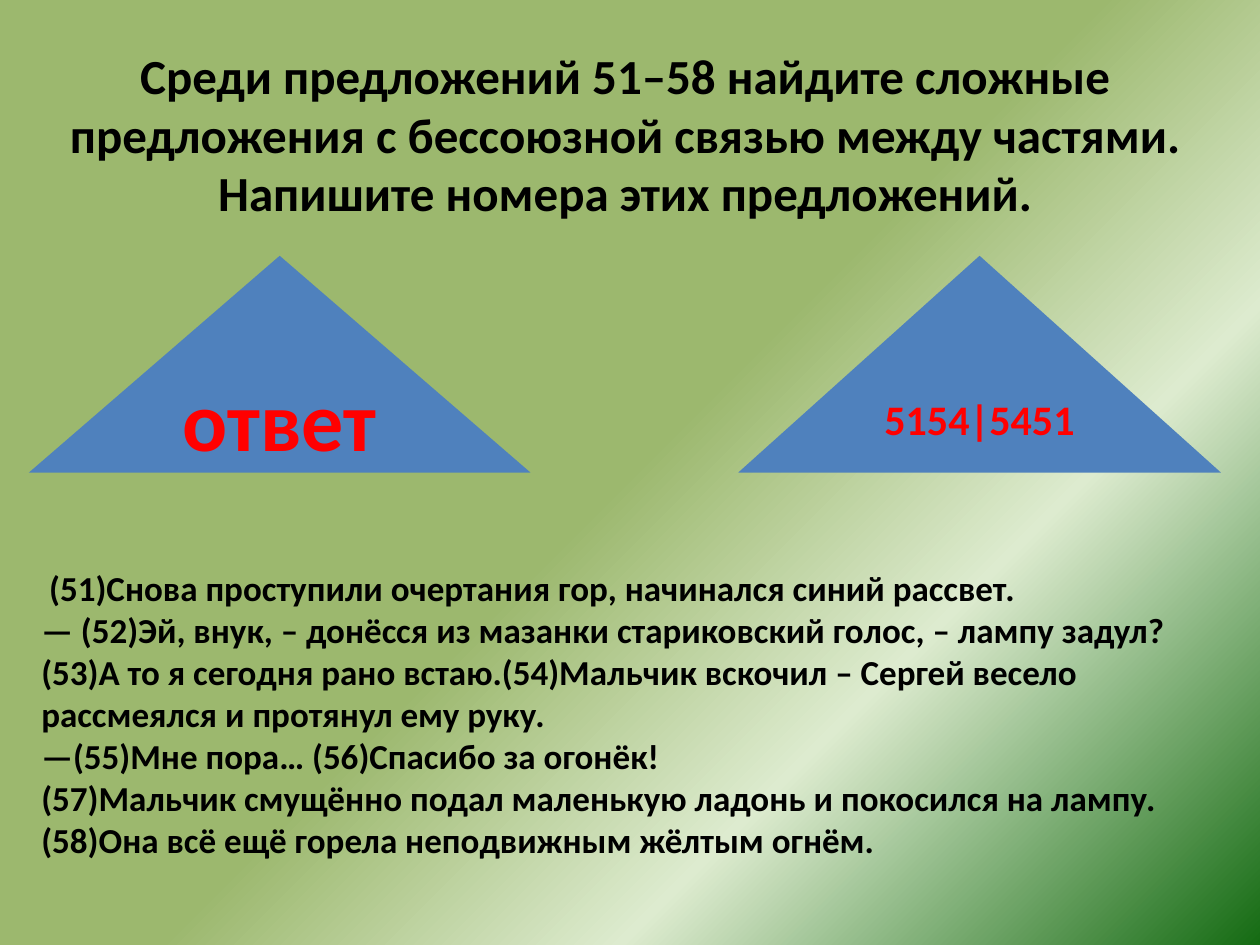
from copy import deepcopy
from dataclasses import dataclass

from pptx import Presentation
from pptx.dml.color import RGBColor as RGB
from pptx.enum.shapes import MSO_SHAPE as Shape
from pptx.enum.text import MSO_ANCHOR as Anchor, PP_ALIGN as Align
from pptx.oxml.ns import qn
from pptx.util import Inches, Pt


@dataclass(frozen=True)
class Theme:
    font: str = "Calibri"
    text: str = "000000"
    accent: str = "FF0000"
    triangle: str = "4F81BD"
    gradient: tuple = ((0.5, "9CB86E"), (0.71, "DDEBCF"), (1, "156B13"))
    title_size: int = 28
    body_size: int = 20
    answer_size: int = 48
    code_size: int = 24


@dataclass(frozen=True)
class Triangle:
    left: float
    width: float
    label: str
    size: int


THEME = Theme()
TRIANGLE_TOP, TRIANGLE_HEIGHT = 2.03, 1.72
TRIANGLES = (
    Triangle(0.23, 3.98, "ответ", THEME.answer_size),
    Triangle(5.86, 3.83, "5154|5451", THEME.code_size),
)
TITLE = ("Среди предложений 51–58 найдите сложные предложения с бессоюзной "
         "связью между частями. Напишите номера этих предложений.")
SENTENCES = (
    " (51)Снова проступили очертания гор, начинался синий рассвет.",
    "— (52)Эй, внук, – донёсся из мазанки стариковский голос, – лампу задул? "
    "(53)А то я сегодня рано встаю.(54)Мальчик вскочил – Сергей весело "
    "рассмеялся и протянул ему руку.",
    "—(55)Мне пора… (56)Спасибо за огонёк!",
    "(57)Мальчик смущённо подал маленькую ладонь и покосился на лампу. "
    "(58)Она всё ещё горела неподвижным жёлтым огнём.",
)


def write(tf, *lines: str, size: int, color: str = THEME.text,
          align=Align.LEFT, anchor=Anchor.TOP) -> None:
    tf.word_wrap = True
    tf.vertical_anchor = anchor
    for i, line in enumerate(lines):
        p = tf.add_paragraph() if i else tf.paragraphs[0]
        p.alignment = align
        r = p.add_run()
        r.text = line
        r.font.name, r.font.size, r.font.bold = THEME.font, Pt(size), True
        r.font.color.rgb = RGB.from_string(color)


def paint_background(s) -> None:
    fill = s.background.fill
    fill.gradient()
    fill.gradient_angle = 315  # counter-clockwise: runs to the lower right
    stops = s.element.find(".//" + qn("a:gsLst"))
    stops.append(deepcopy(stops[-1]))
    for stop, (position, color) in zip(fill.gradient_stops, THEME.gradient):
        stop.position = position
        stop.color.rgb = RGB.from_string(color)


def draw_triangle(s, t: Triangle) -> None:
    sp = s.shapes.add_shape(Shape.ISOSCELES_TRIANGLE, Inches(t.left), Inches(TRIANGLE_TOP),
                            Inches(t.width), Inches(TRIANGLE_HEIGHT))
    sp.shadow.inherit = False
    sp.fill.solid()
    sp.fill.fore_color.rgb = RGB.from_string(THEME.triangle)
    sp.line.fill.background()
    write(sp.text_frame, t.label, size=t.size, color=THEME.accent,
          align=Align.CENTER, anchor=Anchor.MIDDLE)


def main() -> None:
    prs = Presentation()
    prs.slide_width, prs.slide_height = Inches(10), Inches(7.5)
    s = prs.slides.add_slide(prs.slide_layouts[6])
    paint_background(s)

    # Task
    sp = s.shapes.add_textbox(Inches(0.31), Inches(0.31), Inches(9.3), Inches(1.82))
    write(sp.text_frame, TITLE, size=THEME.title_size, align=Align.CENTER)

    # Answer
    for t in TRIANGLES:
        draw_triangle(s, t)

    # Numbered sentences
    sp = s.shapes.add_textbox(Inches(0.23), Inches(4.45), Inches(9.53), Inches(2.76))
    write(sp.text_frame, *SENTENCES, size=THEME.body_size)

    prs.save("out.pptx")


if __name__ == "__main__":
    main()
